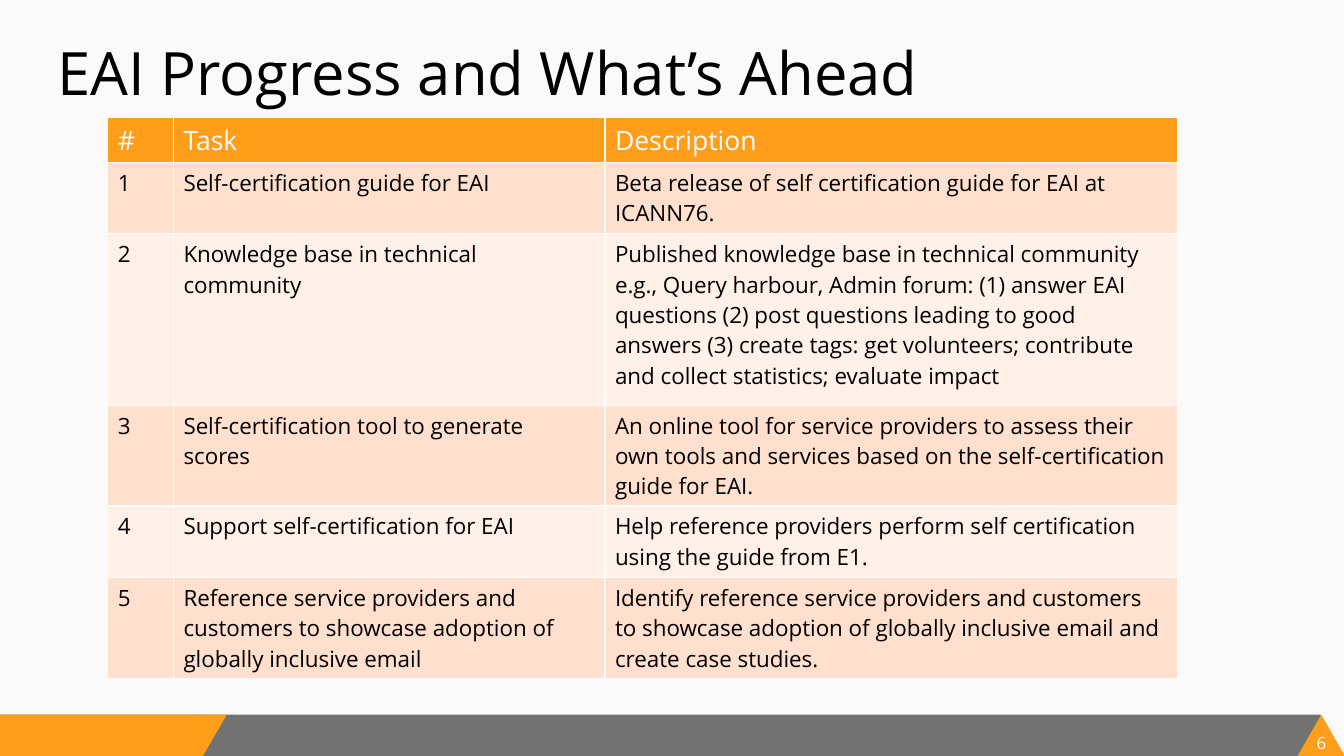
from pptx import Presentation
from pptx.dml.color import RGBColor
from pptx.enum.shapes import MSO_SHAPE
from pptx.enum.text import MSO_ANCHOR, MSO_AUTO_SIZE, PP_ALIGN
from pptx.oxml import parse_xml
from pptx.oxml.ns import nsdecls
from pptx.util import Pt

PX = 9144  # 100 px to the inch
FONT = "Open Sans"
RECT = MSO_SHAPE.RECTANGLE
PEAK = MSO_SHAPE.ISOSCELES_TRIANGLE
SLANT = MSO_SHAPE.PARALLELOGRAM
HEX = {"paper": "FAFAFA", "ink": "000000", "orange": "FF9E1B",
       "grey": "707372", "peach": "FFDFCD", "pale": "FFF0E8"}


def paint(fill, name):
    fill.solid()
    fill.fore_color.rgb = RGBColor.from_string(HEX[name])


def style(par, size, name):
    for run in par.runs:
        run.font.name = FONT
        run.font.size = Pt(size)
        run.font.color.rgb = RGBColor.from_string(HEX[name])


prs = Presentation()
prs.slide_width, prs.slide_height = 1333 * PX, 750 * PX
slide = prs.slides.add_slide(prs.slide_layouts[5])
paint(slide.background.fill, "paper")

# Footer band
band = [
    (RECT, 0, 709, 1310, 42, "grey"),
    (RECT, 0, 709, 200, 41, "orange"),
    (PEAK, 1287, 709, 47, 41, "orange"),
    (SLANT, 178, 709, 47, 41, "orange"),
    (RECT, 191, 709, 18, 9, "orange"),
]
for kind, x, y, w, h, name in band:
    shape = slide.shapes.add_shape(kind, x * PX, y * PX, w * PX, h * PX)
    shape.shadow.inherit = False
    paint(shape.fill, name)
    shape.line.fill.background()
    if kind == SLANT:
        shape.adjustments[0] = 0.58

# Page number
box = slide.shapes.add_textbox(1300 * PX, 727 * PX, 21 * PX, 20 * PX)
frame = box.text_frame
frame.margin_left = frame.margin_right = 0
frame.margin_top = frame.margin_bottom = 0
frame.word_wrap = False
frame.text = "6"
frame.paragraphs[0].alignment = PP_ALIGN.CENTER
style(frame.paragraphs[0], 12, "paper")

# Title
title = slide.shapes.title
title.left, title.top = 47 * PX, 30 * PX
title.width, title.height = 1232 * PX, 125 * PX
frame = title.text_frame
frame.auto_size = MSO_AUTO_SIZE.NONE
frame.vertical_anchor = MSO_ANCHOR.TOP
frame.text = "EAI Progress and What’s Ahead"
frame.paragraphs[0].alignment = PP_ALIGN.LEFT
style(frame.paragraphs[0], 42.7, "ink")

# Task table
tasks = [
    ("#", "Task", "Description"),
    ("1", "Self-certification guide for EAI",
     "Beta release of self certification guide for EAI at ICANN76."),
    ("2", "Knowledge base in technical community",
     "Published knowledge base in technical community e.g., Query harbour, "
     "Admin forum: (1) answer EAI questions (2) post questions leading to "
     "good answers (3) create tags: get volunteers; contribute and collect "
     "statistics; evaluate impact"),
    ("3", "Self-certification tool to generate scores",
     "An online tool for service providers to assess their own tools and "
     "services based on the self-certification guide for EAI."),
    ("4", "Support self-certification for EAI",
     "Help reference providers perform self certification using the guide "
     "from E1."),
    ("5", "Reference service providers and customers to showcase adoption of "
     "globally inclusive email",
     "Identify reference service providers and customers to showcase "
     "adoption of globally inclusive email and create case studies."),
]
cols = [65, 428, 568]
rows = [45, 71, 170, 100, 71, 100]
table = slide.shapes.add_table(len(rows), len(cols), 107 * PX, 116 * PX,
                               sum(cols) * PX, sum(rows) * PX).table
for col, width in zip(table.columns, cols):
    col.width = width * PX
for row, height in zip(table.rows, rows):
    row.height = height * PX

for r, task in enumerate(tasks):
    if r == 0:
        size, ink, back = 19, "paper", "orange"
    else:
        size, ink, back = 16, "ink", "peach" if r % 2 else "pale"
    for c, text in enumerate(task):
        cell = table.cell(r, c)
        cell.text = text
        style(cell.text_frame.paragraphs[0], size, ink)
        cell.text_frame.paragraphs[0].font.bold = False
        # Cell borders
        props = cell._tc.get_or_add_tcPr()
        for side in "LRTB":
            props.append(parse_xml(
                f'<a:ln{side} {nsdecls("a")} w="12700"><a:solidFill>'
                f'<a:srgbClr val="{HEX["paper"]}"/></a:solidFill></a:ln{side}>'))
        paint(cell.fill, back)

prs.save("out.pptx")
